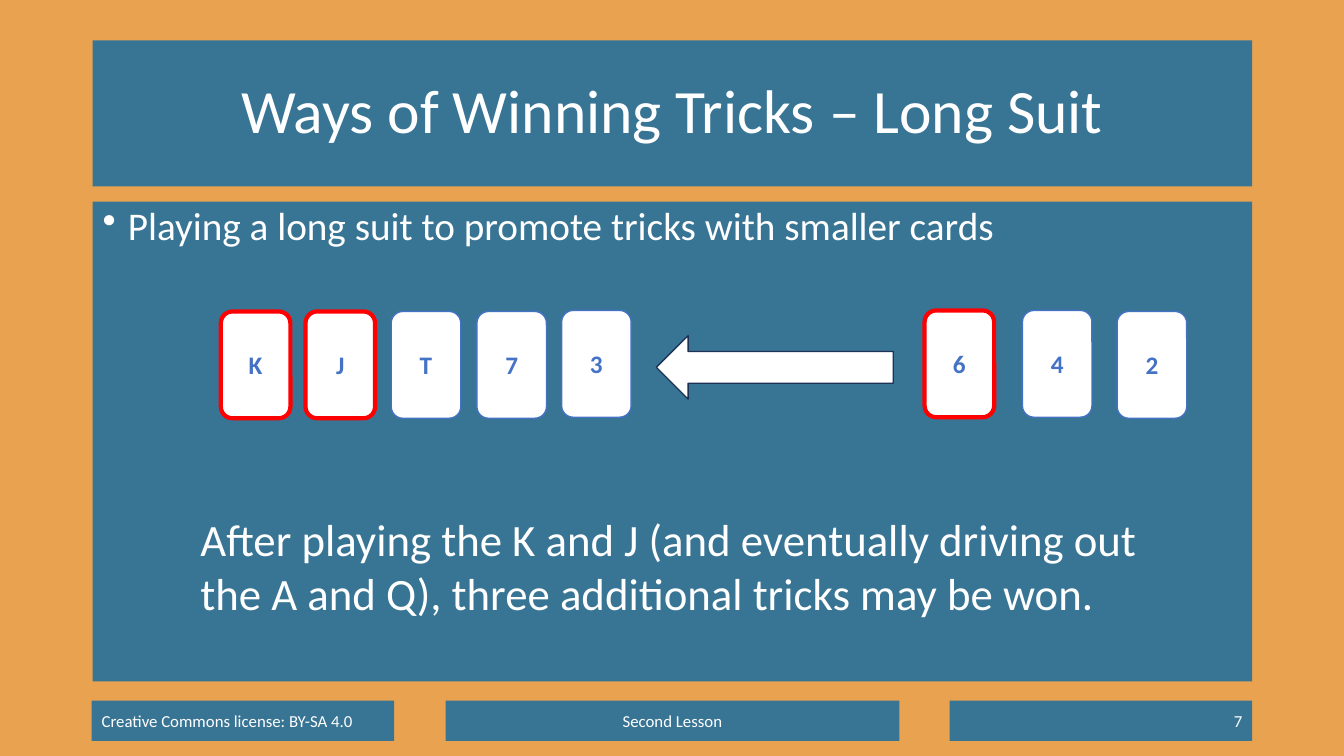
from dataclasses import dataclass

import pptx
import pptx.dml.color
import pptx.enum.shapes
import pptx.enum.text
import pptx.oxml
import pptx.oxml.ns
import pptx.util

RGBColor = pptx.dml.color.RGBColor
Shape = pptx.enum.shapes.MSO_SHAPE
Align = pptx.enum.text.PP_ALIGN
Anchor = pptx.enum.text.MSO_ANCHOR

ORANGE = RGBColor(0xE9, 0xA3, 0x50)
TEAL = RGBColor(0x38, 0x74, 0x94)
WHITE = RGBColor(0xFF, 0xFF, 0xFF)
RED = RGBColor(0xFF, 0x00, 0x00)
BLUE = RGBColor(0x44, 0x72, 0xC4)
NAVY = RGBColor(0x1E, 0x32, 0x56)

EMU_PER_PX = 9144
CARD_WIDTH, CARD_HEIGHT = 69, 106
FOOTER_TOP, FOOTER_HEIGHT = 695, 40
BULLET_INDENT = 25


@dataclass(frozen=True)
class Box:
    left: int
    top: int
    width: int
    height: int

    def emu(self) -> list[pptx.util.Emu]:
        return [px(n) for n in (self.left, self.top, self.width, self.height)]


@dataclass(frozen=True)
class Panel:
    text: str
    box: Box
    size: int
    align: Align
    anchor: Anchor = Anchor.MIDDLE
    line_spacing: float = 1.0
    bulleted: bool = False


@dataclass(frozen=True)
class Card:
    rank: str
    left: int
    top: int
    wins: bool = False


PANELS = [
    Panel("Creative Commons license: BY-SA 4.0",
          Box(91, FOOTER_TOP, 300, FOOTER_HEIGHT), 12, Align.LEFT),
    Panel("Ways of Winning Tricks – Long Suit",
          Box(92, 40, 1150, 145), 44, Align.CENTER, line_spacing=0.9),
    Panel("Playing a long suit to promote tricks with smaller cards",
          Box(92, 200, 1150, 476), 28, Align.LEFT, Anchor.TOP, 0.9, True),
    Panel("Second Lesson",
          Box(442, FOOTER_TOP, 450, FOOTER_HEIGHT), 12, Align.CENTER),
    Panel("7", Box(942, FOOTER_TOP, 300, FOOTER_HEIGHT), 12, Align.RIGHT),
]

CARDS = [
    Card("K", 219, 309, True),
    Card("J", 303, 309, True),
    Card("T", 388, 309),
    Card("7", 473, 309),
    Card("3", 557, 308),
    Card("6", 917, 308, True),
    Card("4", 1014, 308),
    Card("2", 1108, 309),
]

ARROW = Box(651, 333, 235, 63)
CONCLUSION = Box(189, 503, 1000, 118)


def px(count: int) -> pptx.util.Emu:
    """Convert px to EMU."""
    return pptx.util.Emu(count * EMU_PER_PX)


def write(shape, text: str, size: int, color: RGBColor, align: Align,
          anchor: Anchor, bold: bool = False):
    """Fill a shape with one styled paragraph and return it."""
    frame = shape.text_frame
    frame.word_wrap = True
    frame.vertical_anchor = anchor
    paragraph = frame.paragraphs[0]
    paragraph.text = text
    paragraph.alignment = align
    paragraph.font.name = "Calibri"
    paragraph.font.size = pptx.util.Pt(size)
    paragraph.font.bold = bold
    paragraph.font.color.rgb = color
    return paragraph


def add_filled(slide, kind: Shape, box: Box, fill: RGBColor,
               line: RGBColor | None = None, line_width: int = 1):
    """Add a shadowless preset shape, outlined if a line colour is given."""
    shape = slide.shapes.add_shape(kind, *box.emu())
    shape.shadow.inherit = False
    shape.fill.solid()
    shape.fill.fore_color.rgb = fill
    if line is None:
        shape.line.fill.background()
    else:
        shape.line.color.rgb = line
        shape.line.width = pptx.util.Pt(line_width)
    return shape


def add_bullet(paragraph) -> None:
    """Give a paragraph a hanging round bullet."""
    properties = paragraph._p.get_or_add_pPr()
    properties.set("marL", str(px(BULLET_INDENT)))
    properties.set("indent", str(-px(BULLET_INDENT)))
    namespace = pptx.oxml.ns.nsdecls("a")
    bullet = pptx.oxml.parse_xml(f'<a:buChar {namespace} char="•"/>')
    properties.insert_element_before(bullet, "a:tabLst", "a:defRPr", "a:extLst")


def add_panel(slide, panel: Panel) -> None:
    """Add a teal panel with its text."""
    shape = add_filled(slide, Shape.RECTANGLE, panel.box, TEAL)
    paragraph = write(shape, panel.text, panel.size, WHITE, panel.align, panel.anchor)
    paragraph.line_spacing = panel.line_spacing
    if panel.bulleted:
        paragraph.space_before = pptx.util.Pt(10)
        add_bullet(paragraph)


def add_card(slide, card: Card) -> None:
    """Add a playing card, outlined in red when it is played first."""
    box = Box(card.left, card.top, CARD_WIDTH, CARD_HEIGHT)
    line, line_width = (RED, 3) if card.wins else (BLUE, 1)
    shape = add_filled(slide, Shape.ROUNDED_RECTANGLE, box, WHITE, line, line_width)
    write(shape, card.rank, 18, BLUE, Align.CENTER, Anchor.MIDDLE, bold=True)


def main() -> None:
    """Build the long suit slide."""
    deck = pptx.Presentation()
    deck.slide_width, deck.slide_height = px(1333), px(750)
    slide = deck.slides.add_slide(deck.slide_layouts[6])
    slide.background.fill.solid()
    slide.background.fill.fore_color.rgb = ORANGE

    for panel in PANELS:
        add_panel(slide, panel)
    for card in CARDS:
        add_card(slide, card)
    add_filled(slide, Shape.LEFT_ARROW, ARROW, WHITE, NAVY)
    conclusion = slide.shapes.add_textbox(*CONCLUSION.emu())
    write(conclusion,
          "After playing the K and J (and eventually driving out "
          "the A and Q), three additional tricks may be won.",
          32, WHITE, Align.LEFT, Anchor.TOP)

    deck.save("out.pptx")


if __name__ == "__main__":
    main()
